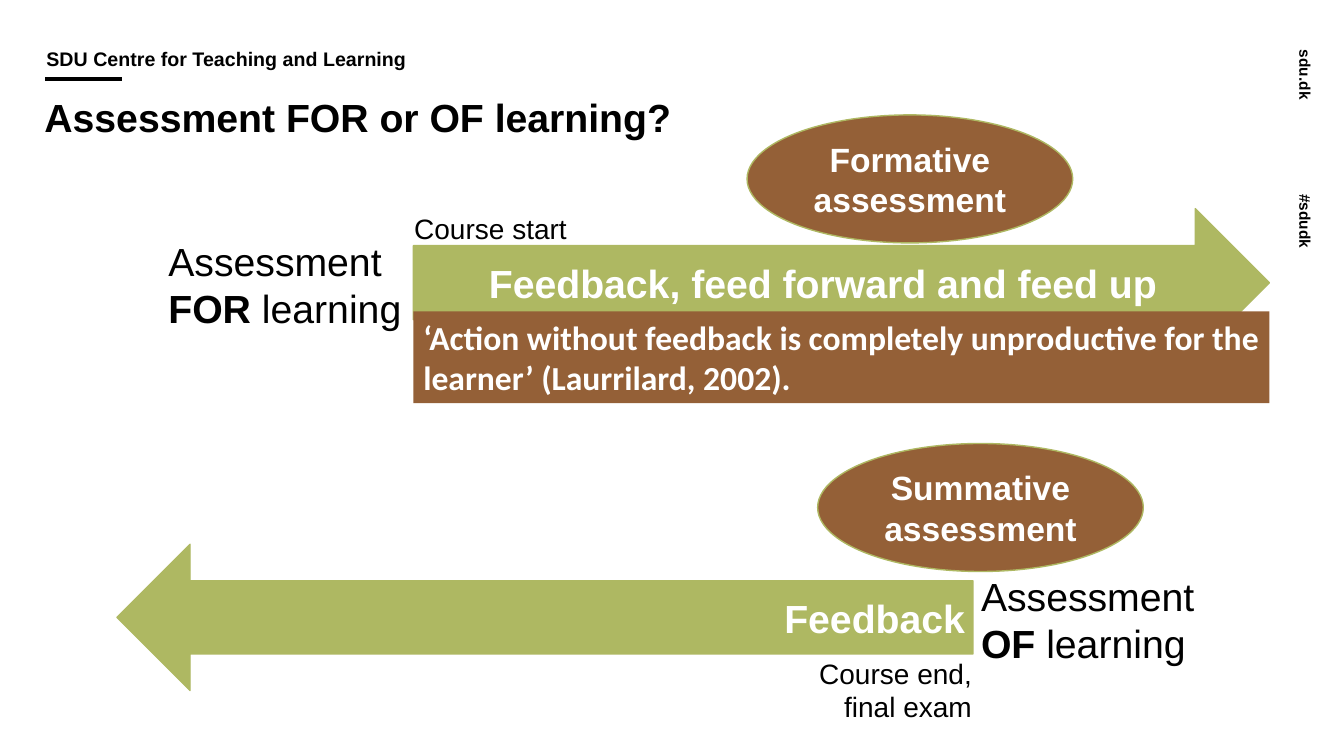
"""Build a slide that contrasts assessment for learning with assessment of learning."""
from dataclasses import dataclass

from lxml import etree
from pptx import Presentation
from pptx.dml.color import RGBColor
from pptx.enum.shapes import MSO_CONNECTOR, MSO_SHAPE
from pptx.enum.text import MSO_ANCHOR, PP_ALIGN
from pptx.oxml.ns import qn
from pptx.util import Inches, Pt

RIGHT_ARROW, LEFT_ARROW = MSO_SHAPE.RIGHT_ARROW, MSO_SHAPE.LEFT_ARROW
OVAL, RECT = MSO_SHAPE.OVAL, MSO_SHAPE.RECTANGLE
STRAIGHT = MSO_CONNECTOR.STRAIGHT
TOP, MIDDLE, BOTTOM = MSO_ANCHOR.TOP, MSO_ANCHOR.MIDDLE, MSO_ANCHOR.BOTTOM
LEFT, CENTER, RIGHT = PP_ALIGN.LEFT, PP_ALIGN.CENTER, PP_ALIGN.RIGHT


@dataclass(frozen=True)
class Theme:
    """Colours, fonts and type sizes of the slide."""
    black: str = "000000"
    white: str = "FFFFFF"
    green: str = "AEB862"
    brown: str = "946037"
    font: str = "Arial"
    quote: str = "Calibri"
    large: int = 28
    medium: int = 24
    small: int = 20
    header: int = 14
    side: int = 11


class Board:
    """Draws elements on one slide in one theme."""

    def __init__(self, slide, theme):
        """Keep the slide and its theme."""
        self.slide, self.theme = slide, theme

    def label(self, shape, runs, size, color, insets=(0, 0, 0, 0), anchor=TOP,
              align=LEFT, font=None, spacing=1.0):
        """Fill a shape with one paragraph of (text, bold) runs."""
        left, top, right, bottom = map(Inches, insets)
        frame = shape.text_frame
        para = frame.paragraphs[0]
        layout = {"word_wrap": True, "vertical_anchor": anchor,
                  "margin_left": left, "margin_top": top,
                  "margin_right": right, "margin_bottom": bottom}
        for name, value in layout.items():
            setattr(frame, name, value)
        para.alignment, para.line_spacing = align, spacing
        for text, bold in runs:
            run = para.add_run()
            run.text = text
            style = {"name": font or self.theme.font, "size": Pt(size), "bold": bold}
            for name, value in style.items():
                setattr(run.font, name, value)
            run.font.color.rgb = RGBColor.from_string(color)

    def text(self, box, runs, size, turn=0, **style):
        """Add a text box in black."""
        shape = self.slide.shapes.add_textbox(*map(Inches, box))
        shape.rotation = turn
        self.label(shape, runs, size, self.theme.black, **style)

    def block(self, kind, box, text, size, fill, edge=None, **style):
        """Add a filled shape with bold white text."""
        shape = self.slide.shapes.add_shape(kind, *map(Inches, box))
        shape.shadow.inherit = False
        shape.fill.solid()
        shape.fill.fore_color.rgb = RGBColor.from_string(fill)
        if edge:
            shape.line.color.rgb = RGBColor.from_string(edge)
            shape.line.width = Pt(1)
        else:
            shape.line.fill.background()
        self.label(shape, [(text, True)], size, self.theme.white,
                   anchor=MIDDLE, **style)

    def rule(self, left, right, top, width):
        """Add a level black line."""
        line = self.slide.shapes.add_connector(
            STRAIGHT, Inches(left), Inches(top), Inches(right), Inches(top))
        line.line.color.rgb = RGBColor.from_string(self.theme.black)
        line.line.width = Pt(width)
        etree.SubElement(line.element.spPr, qn("a:effectLst"))


def main():
    """Build and save the slide."""
    deck = Presentation()
    deck.slide_width, deck.slide_height = Inches(13.33), Inches(7.5)
    theme = Theme()
    board = Board(deck.slides.add_slide(deck.slide_layouts[6]), theme)
    pad = (0.08,) * 4

    for text, top in (("sdu.dk", 0.79), ("#sdudk", 2.22)):
        board.text((12.56, top, 1, 0.41), [(text, True)], theme.side,
                   turn=90, anchor=BOTTOM)
    board.rule(0.45, 1.21, 0.78, 3)
    board.text((0.45, 0.49, 6.22, 0.31),
               [("SDU Centre for Teaching and Learning", True)], theme.header,
               insets=(0.01, 0, 0, 0.1), anchor=BOTTOM, spacing=0.9)
    board.text((0.44, 0.95, 11.99, 0.73),
               [("Assessment FOR or OF learning?", True)], theme.large, spacing=0.97)

    arrows = (
        (RIGHT_ARROW, (4.1, 2.07, 8.49, 1.47), "Feedback, feed forward and feed up",
         CENTER, "FOR", (1.67, 2.35),
         "Course start", (4.02, 2.1, 1.69, 0.34), CENTER),
        (LEFT_ARROW, (1.16, 5.4, 8.49, 1.45), "Feedback",
         RIGHT, "OF", (9.73, 5.68),
         "Course end, final exam", (7.95, 6.51, 1.69, 0.67), RIGHT),
    )
    for kind, box, text, align, word, spot, note, place, side in arrows:
        board.text((*spot, 2.72, 0.94),
                   [("Assessment ", False), (word, True), (" learning", False)],
                   theme.large)
        board.block(kind, box, text, theme.large, theme.green, theme.green,
                    insets=pad, align=align)
        board.text(place, [(note, False)], theme.small, align=side)

    for text, left, top in (("Formative assessment", 7.41, 1.14),
                            ("Summative assessment", 8.11, 4.4)):
        board.block(OVAL, (left, top, 3.23, 1.27), text, theme.medium,
                    theme.brown, theme.green, insets=pad, align=CENTER)
    board.block(RECT, (4.1, 3.09, 8.49, 0.91),
                "‘Action without feedback is completely unproductive for "
                "the learner’ (Laurrilard, 2002).",
                theme.medium, theme.brown, insets=(0.1, 0.05, 0.1, 0.05),
                font=theme.quote)
    deck.save("out.pptx")


if __name__ == "__main__":
    main()
